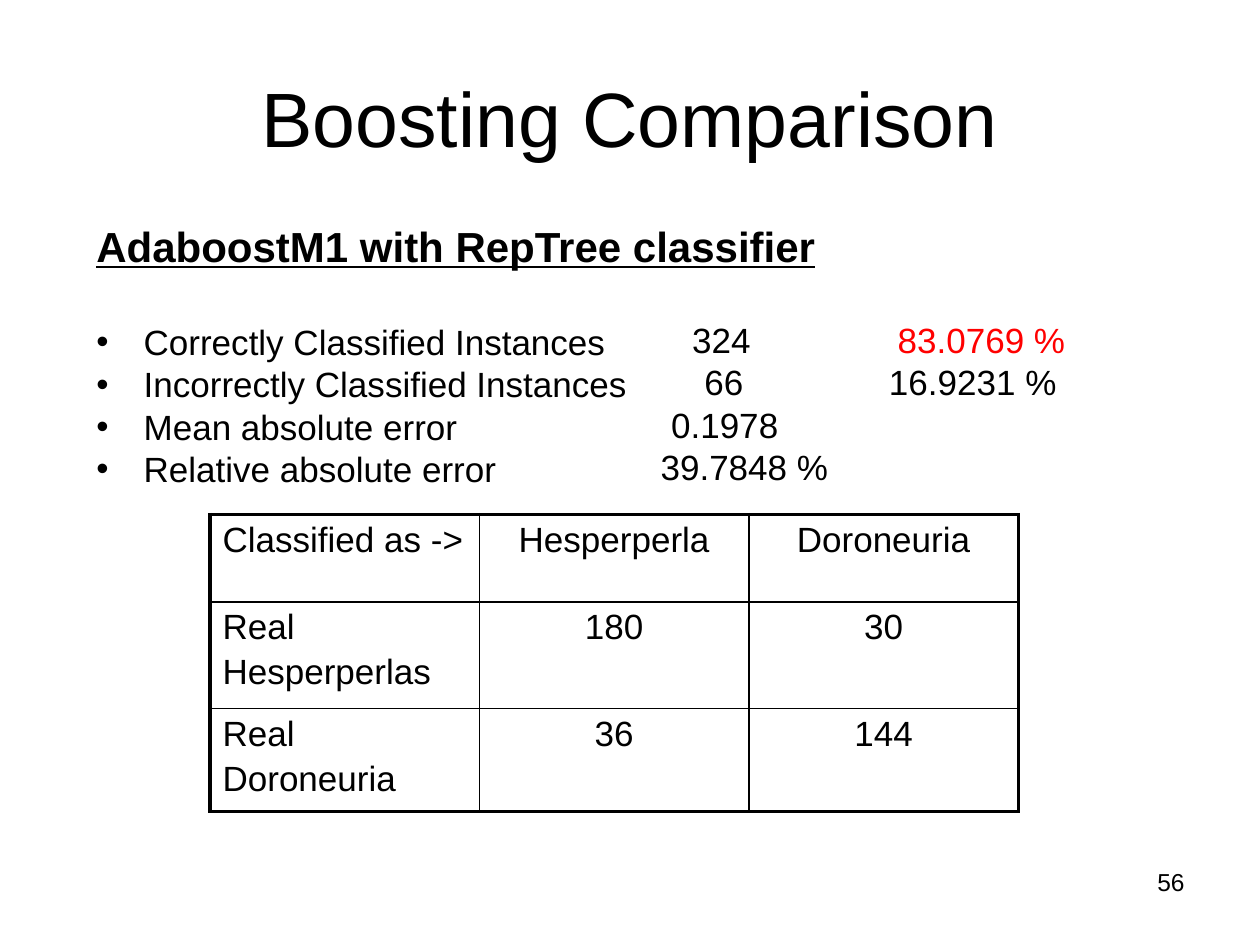
from pptx import Presentation
from pptx.dml.color import RGBColor
from pptx.enum import text as t
from pptx.oxml.ns import qn
from pptx.util import Pt
from lxml import etree

LEFT, MID, RIGHT = t.PP_ALIGN.LEFT, t.PP_ALIGN.CENTER, t.PP_ALIGN.RIGHT
BLACK, RED = "000000", "FF0000"


def color(code):
    return RGBColor.from_string(code)


class Deck:
    font = "Arial"

    def __init__(self, wide, high):
        self.prs = Presentation()
        self.prs.slide_width, self.prs.slide_height = Pt(wide), Pt(high)
        self.slide = self.prs.slides.add_slide(self.prs.slide_layouts[5])

    def run(self, para, words, size, ink=BLACK, bold=False, line=False):
        run = para.add_run()
        run.text = words
        run.font.name, run.font.size = self.font, Pt(size)
        run.font.bold, run.font.underline = bold, line
        run.font.color.rgb = color(ink)

    def para(self, frame, words, size, align=LEFT, gap=0, **look):
        para = frame.paragraphs[0]
        if para.runs:
            para = frame.add_paragraph()
        para.alignment, para.space_before = align, Pt(gap)
        self.run(para, words, size, **look)
        return para

    def indent(self, para, left, first=0, mark=None):
        props = para._p.get_or_add_pPr()
        props.set("marL", str(Pt(left)))
        props.set("indent", str(Pt(first)))
        if mark:
            etree.SubElement(props, qn("a:buFont"), typeface=self.font)
            etree.SubElement(props, qn("a:buChar"), char=mark)

    def place(self, shape, box):
        shape.left, shape.top, shape.width, shape.height = map(Pt, box)

    def title(self, words, box):
        shape = self.slide.shapes.title
        self.place(shape, box)
        shape.text_frame.vertical_anchor = t.MSO_ANCHOR.MIDDLE
        self.para(shape.text_frame, words, 44, MID)

    def box(self, box, flush=False):
        frame = self.slide.shapes.add_textbox(*map(Pt, box)).text_frame
        frame.word_wrap = True
        if flush:
            frame.margin_top = frame.margin_bottom = 0
        return frame

    def column(self, box, rows, size, gap):
        frame = self.box(box, True)
        frame.margin_left = frame.margin_right = 0
        for words, left, ink in rows:
            para = self.para(frame, words, size, gap=gap, ink=ink)
            self.indent(para, left)

    def border(self, cell, widths):
        props = cell._tc.get_or_add_tcPr()
        for side, width in zip("LRTB", widths):
            line = etree.SubElement(props, qn("a:ln" + side), w=str(Pt(width)))
            fill = etree.SubElement(line, qn("a:solidFill"))
            etree.SubElement(fill, qn("a:srgbClr"), val=BLACK)

    def table(self, spot, wide, highs, rows, size, thick, thin):
        count = len(rows[0])
        area = (*spot, wide * count, sum(highs))
        grid = self.slide.shapes.add_table(len(rows), count, *map(Pt, area)).table
        grid.first_row = grid.horz_banding = False
        for col in grid.columns:
            col.width = Pt(wide)
        for r, row in enumerate(rows):
            grid.rows[r].height = Pt(highs[r])
            for c, words in enumerate(row):
                cell = grid.cell(r, c)
                edges = (c == 0, c == count - 1, r == 0, r == len(rows) - 1)
                self.border(cell, [thick if edge else thin for edge in edges])
                cell.fill.background()
                for n, part in enumerate(words.split("\n")):
                    self.para(cell.text_frame, part, size,
                              MID if c else LEFT, 3.4 if n else 0)


def main():
    deck = Deck(720, 540)
    deck.para(deck.box((516, 492, 168, 37.5)), "56", 14, RIGHT)
    deck.title("Boosting Comparison", (36, 21.6, 648, 90))

    body = deck.box((48, 126, 594, 156), True)
    deck.para(body, "AdaboostM1 with RepTree classifier", 24, bold=True, line=True)
    labels = ["Correctly Classified Instances", "Incorrectly Classified Instances",
              "Mean absolute error", "Relative absolute error"]
    for n, label in enumerate(labels):
        para = deck.para(body, label, 20, gap=0.2 if n else 28.4)
        deck.indent(para, 27, -27, "•")

    counts = [("324", 18, BLACK), ("66", 25, BLACK),
              ("0.1978", 6, BLACK), ("39.7848 %", 0, BLACK)]
    shares = [("83.0769 %", 5, RED), ("16.9231 %", 0, BLACK)]
    deck.column((377.5, 182, 110, 94), counts, 20, 0.2)
    deck.column((508, 182, 110, 47), shares, 20, 0.2)

    rows = [("Classified as ->", "Hesperperla", "Doroneuria"),
            ("Real\nHesperperlas", "180", "30"),
            ("Real\nDoroneuria", "36", "144")]
    deck.table((120, 294), 154, (50, 61, 58.5), rows, 20, 2.25, 1)
    deck.prs.save("out.pptx")


if __name__ == "__main__":
    main()
